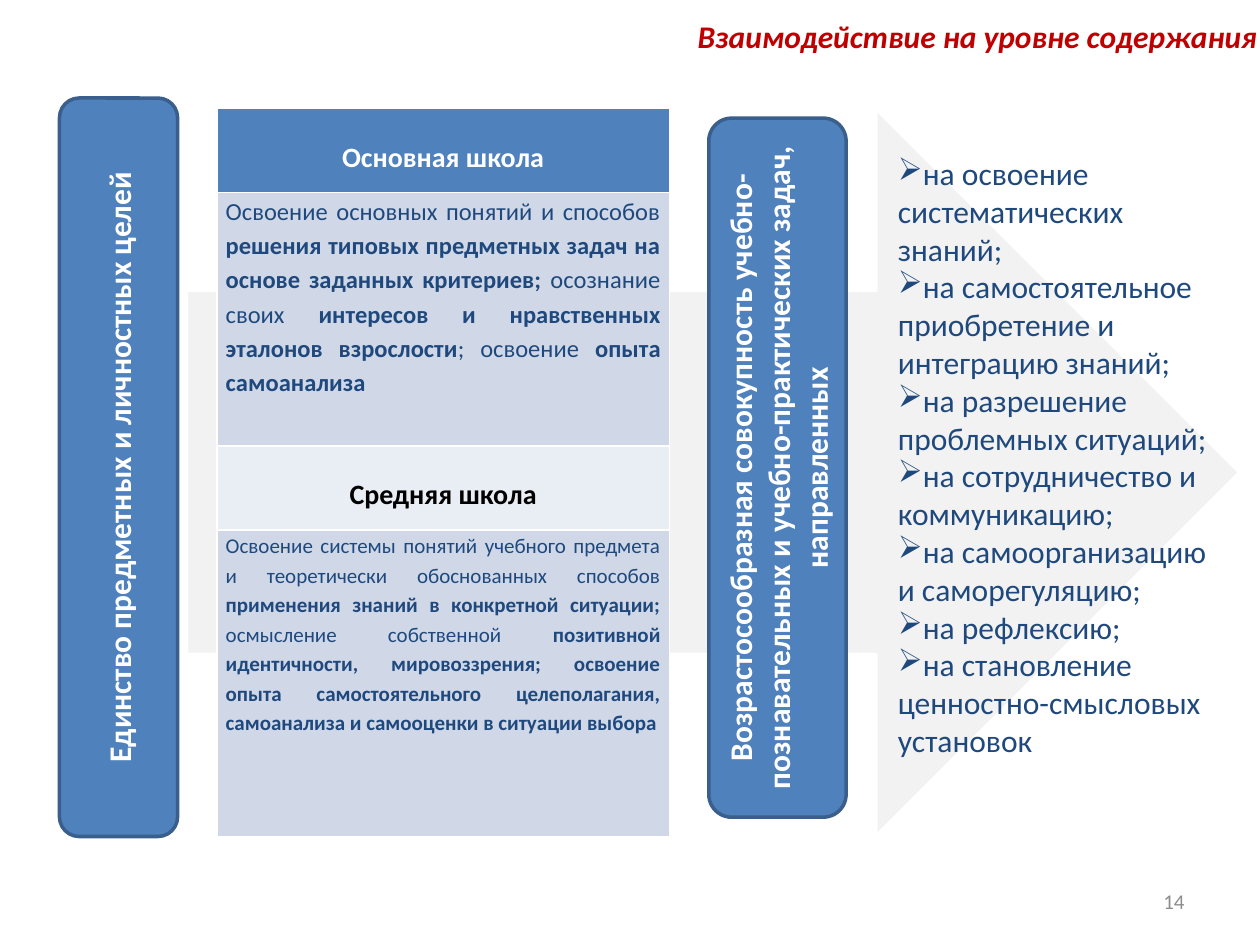
from lxml.etree import SubElement
from pptx import Presentation
from pptx.dml.color import RGBColor
from pptx.enum.shapes import MSO_SHAPE
from pptx.enum.text import MSO_ANCHOR, PP_ALIGN
from pptx.oxml.ns import qn
from pptx.util import Pt

BLUE = RGBColor(0x4F, 0x81, 0xBD)
EDGE_BLUE = RGBColor(0x3A, 0x5F, 0x8C)
NAVY = RGBColor(0x1F, 0x49, 0x7D)
PALE_BLUE = RGBColor(0xD0, 0xD8, 0xE8)
PALER_BLUE = RGBColor(0xE9, 0xED, 0xF4)
LIGHT_GREY = RGBColor(0xF2, 0xF2, 0xF2)
GREY = RGBColor(0x8C, 0x8C, 0x8C)
RED = RGBColor(0xC0, 0x00, 0x00)
WHITE = RGBColor(0xFF, 0xFF, 0xFF)
BLACK = RGBColor(0x00, 0x00, 0x00)


def add_run(paragraph, words, size, color, bold=False, italic=False):
    run = paragraph.add_run()
    run.text = words
    run.font.name = "Calibri"
    run.font.size = Pt(size)
    run.font.bold = bold
    run.font.italic = italic
    run.font.color.rgb = color


def add_block(kind, left, top, width, height, fill, edge):
    block = slide.shapes.add_shape(kind, Pt(left), Pt(top), Pt(width), Pt(height))
    block.shadow.inherit = False
    block.fill.solid()
    block.fill.fore_color.rgb = fill
    block.line.color.rgb = edge
    block.line.width = Pt(2)
    return block


prs = Presentation()
prs.slide_width, prs.slide_height = Pt(720), Pt(540)
slide = prs.slides.add_slide(prs.slide_layouts[6])

# Arrow behind the table, and the two upright bars
add_block(MSO_SHAPE.RIGHT_ARROW, 106.5, 62, 602, 416, LIGHT_GREY, WHITE)

bars = [
    (34, 56, 67.5, 422, "Единство предметных и личностных целей"),
    (405, 67.5, 78.5, 399.5,
     "Возрастосообразная совокупность учебно-познавательных "
     "и учебно-практических задач, направленных"),
]
for left, top, width, height, words in bars:
    bar = add_block(MSO_SHAPE.FLOWCHART_ALTERNATE_PROCESS,
                    left, top, width, height, BLUE, EDGE_BLUE)
    frame = bar.text_frame
    frame.word_wrap = True
    frame.vertical_anchor = MSO_ANCHOR.MIDDLE
    frame._txBody.bodyPr.set("vert", "vert270")
    frame.paragraphs[0].alignment = PP_ALIGN.CENTER
    add_run(frame.paragraphs[0], words, 18, WHITE, bold=True)

# School levels: height, fill, top margin, alignment, size, colour, (words, bold)
levels = [
    (48, BLUE, 15.4, PP_ALIGN.CENTER, 16, WHITE, [("Основная школа", True)]),
    (145, PALE_BLUE, 0, PP_ALIGN.JUSTIFY, 14, NAVY, [
        ("Освоение основных понятий и способов ", False),
        ("решения типовых предметных задач на основе заданных критериев; ", True),
        ("осознание своих ", False),
        ("интересов и нравственных эталонов взрослости", True),
        ("; освоение ", False),
        ("опыта самоанализа", True),
    ]),
    (48, PALER_BLUE, 15.4, PP_ALIGN.CENTER, 16, BLACK, [("Средняя школа", True)]),
    (175, PALE_BLUE, 0, PP_ALIGN.JUSTIFY, 12, NAVY, [
        ("Освоение системы понятий учебного предмета и теоретически "
         "обоснованных способов ", False),
        ("применения знаний в конкретной ситуации; ", True),
        ("осмысление собственной ", False),
        ("позитивной идентичности, мировоззрения; освоение опыта "
         "самостоятельного целеполагания, самоанализа и самооценки "
         "в ситуации выбора", True),
    ]),
]
schools = slide.shapes.add_table(len(levels), 1, Pt(124), Pt(62), Pt(258.5), Pt(416)).table
schools.columns[0].width = Pt(258.5)
for row, (height, fill, margin, align, size, color, parts) in enumerate(levels):
    schools.rows[row].height = Pt(height)
    cell = schools.cell(row, 0)
    cell.margin_left = cell.margin_right = Pt(5)
    cell.margin_top, cell.margin_bottom = Pt(margin), Pt(0)
    for side in ("lnL", "lnR", "lnT", "lnB"):
        border = SubElement(cell._tc.get_or_add_tcPr(), qn(f"a:{side}"), w=str(Pt(1)))
        paint = SubElement(border, qn("a:solidFill"))
        SubElement(paint, qn("a:srgbClr"), val=str(WHITE))
    cell.fill.solid()
    cell.fill.fore_color.rgb = fill
    paragraph = cell.text_frame.paragraphs[0]
    paragraph.alignment = align
    paragraph.line_spacing = 1.15
    for words, bold in parts:
        add_run(paragraph, words, size, color, bold)

# Aims of the tasks
aims = [
    "на освоение систематических знаний;",
    "на самостоятельное приобретение и интеграцию знаний;",
    "на разрешение проблемных ситуаций;",
    "на сотрудничество и коммуникацию;",
    "на самоорганизацию и саморегуляцию;",
    "на рефлексию;",
    "на становление ценностно-смысловых установок",
]
aims_frame = slide.shapes.add_textbox(Pt(506), Pt(84.5), Pt(202.5), Pt(356.5)).text_frame
aims_frame.word_wrap = True
for index, aim in enumerate(aims):
    paragraph = aims_frame.add_paragraph() if index else aims_frame.paragraphs[0]
    SubElement(paragraph._p.get_or_add_pPr(), qn("a:buChar"), char="➢")
    add_run(paragraph, aim, 18, NAVY)

# Page number and title
page_frame = slide.shapes.add_textbox(Pt(516), Pt(500.5), Pt(168), Pt(28.5)).text_frame
page_frame.word_wrap = True
page_frame.vertical_anchor = MSO_ANCHOR.MIDDLE
page_frame.paragraphs[0].alignment = PP_ALIGN.RIGHT
add_run(page_frame.paragraphs[0], "14", 12, GREY)

title_frame = slide.shapes.add_textbox(Pt(314.5), Pt(6), Pt(405.5), Pt(51)).text_frame
title_frame.word_wrap = True
title_frame.margin_right = Pt(1.5)
title_frame.paragraphs[0].alignment = PP_ALIGN.RIGHT
add_run(title_frame.paragraphs[0], "Взаимодействие на уровне содержания",
        18, RED, bold=True, italic=True)

prs.save("out.pptx")
